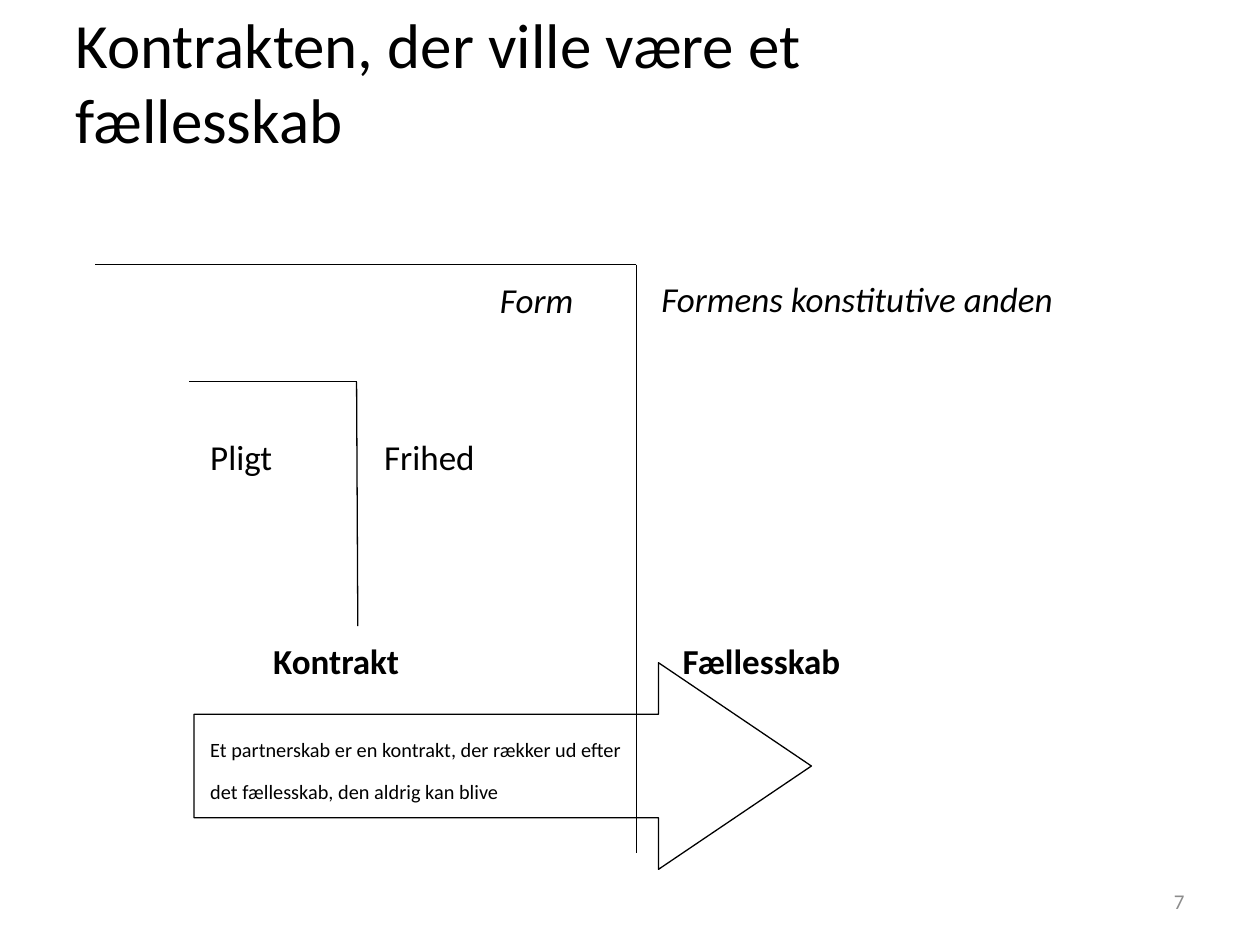
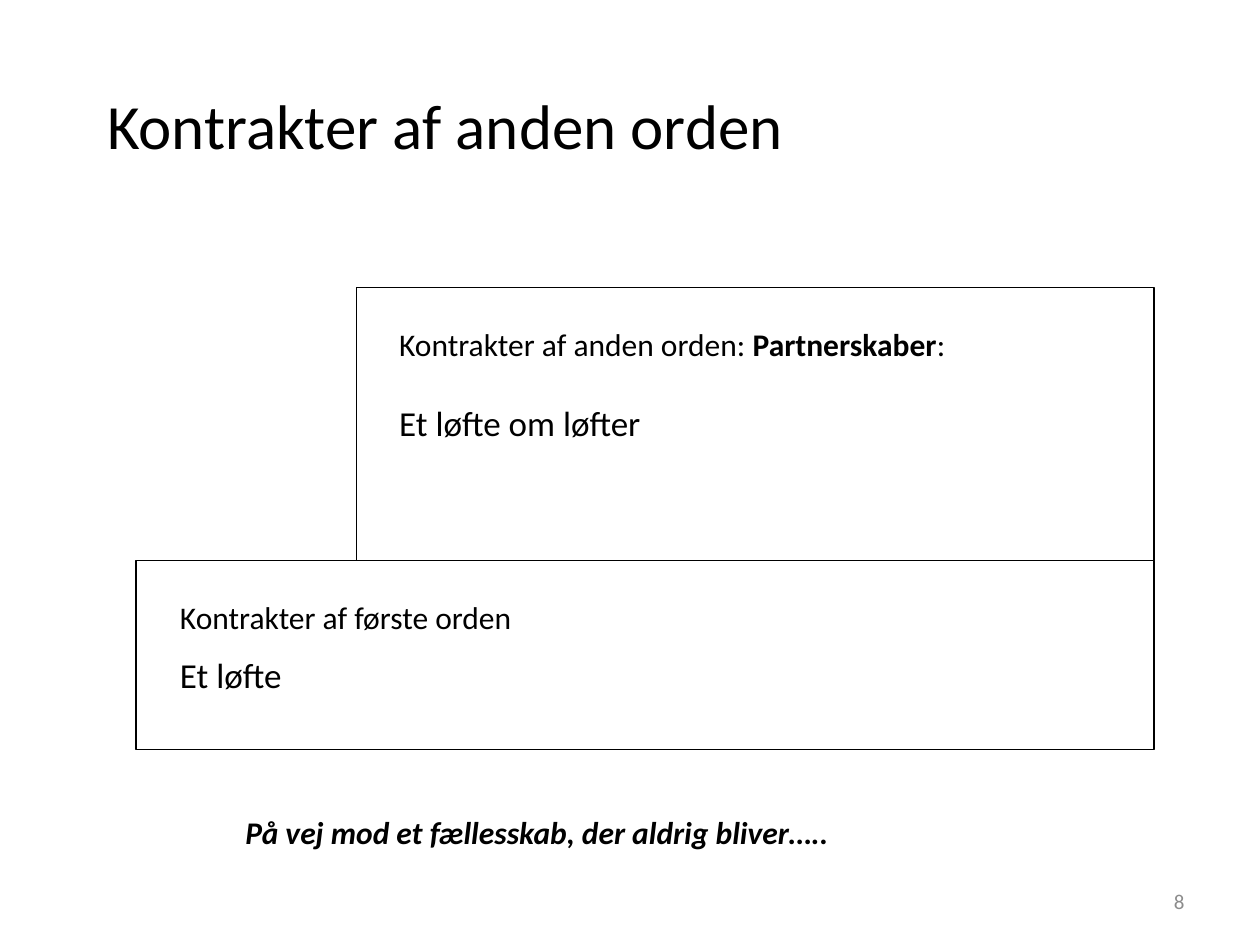
import pptx
import pptx.util
import pptx.dml.color
import pptx.enum.shapes
import pptx.enum.text
import lxml.etree
from pptx.oxml.ns import qn

BLACK = pptx.dml.color.RGBColor(0x00, 0x00, 0x00)
WHITE = pptx.dml.color.RGBColor(0xFF, 0xFF, 0xFF)
GREY = pptx.dml.color.RGBColor(0x8C, 0x8C, 0x8C)
SHAPE = pptx.enum.shapes.MSO_SHAPE
ALIGN = pptx.enum.text.PP_ALIGN
ANCHOR = pptx.enum.text.MSO_ANCHOR
COLS, ROWS = 100, 75
FIRST_NUMBER = 7


class Deck:
    """Holds the style and the current slide; lengths are grid columns and rows."""
    font, line_width = "Calibri", 0.75
    title_size, label_size, small_size, number_size = 36, 20, 18, 12

    def __init__(self):
        self.prs = pptx.Presentation()
        self.prs.slide_width = pptx.util.Inches(10)
        self.prs.slide_height = pptx.util.Inches(7.5)
        self.prs.element.set("firstSlideNum", str(FIRST_NUMBER))

    def x(self, cols):
        return round(self.prs.slide_width * cols / COLS)

    def y(self, rows):
        return round(self.prs.slide_height * rows / ROWS)

    def box(self, left, top, width, height):
        return self.x(left), self.y(top), self.x(width), self.y(height)

    def style(self, p, size, bold=False, italic=False, color=BLACK):
        f = p.font
        f.name, f.size, f.bold, f.italic = self.font, pptx.util.Pt(size), bold, italic
        f.color.rgb = color

    def outline(self, line):
        line.color.rgb = BLACK
        line.width = pptx.util.Pt(self.line_width)

    def slide(self, title, area, bottom_margin=0.5):
        """Starts a slide with its title and slide number."""
        self.s = self.prs.slides.add_slide(self.prs.slide_layouts[5])
        sp = self.s.shapes.title
        sp.left, sp.top, sp.width, sp.height = self.box(*area)
        tf = sp.text_frame
        tf.text = title
        tf.auto_size = pptx.enum.text.MSO_AUTO_SIZE.NONE
        tf.vertical_anchor = ANCHOR.MIDDLE
        tf.margin_bottom = self.y(bottom_margin)
        tf.paragraphs[0].alignment = ALIGN.LEFT
        self.style(tf.paragraphs[0], self.title_size)
        self.number()

    def number(self):
        tf = self.s.shapes.add_textbox(*self.box(71.7, 69.5, 23.3, 4)).text_frame
        tf.vertical_anchor = ANCHOR.MIDDLE
        p = tf.paragraphs[0]
        p.alignment = ALIGN.RIGHT
        self.style(p, self.number_size, color=GREY)
        field = lxml.etree.SubElement(p._p, qn("a:fld"), type="slidenum",
                                      id="{B6F15528-21DE-4FAA-801E-634DDDAF4B2B}")
        lxml.etree.SubElement(field, qn("a:rPr"), lang="da-DK")
        number = FIRST_NUMBER + len(self.prs.slides) - 1
        lxml.etree.SubElement(field, qn("a:t")).text = str(number)

    def shape(self, kind, *area):
        """Adds an outlined shape without fill."""
        sp = self.s.shapes.add_shape(kind, *self.box(*area))
        sp.shadow.inherit = False
        sp.fill.background()
        self.outline(sp.line)
        return sp

    def label(self, text, *area, **look):
        """Adds a white rectangle with text."""
        sp = self.shape(SHAPE.RECTANGLE, *area)
        sp.fill.solid()
        sp.fill.fore_color.rgb = WHITE
        sp.line.fill.background()
        tf = sp.text_frame
        tf.vertical_anchor = ANCHOR.TOP
        p = tf.paragraphs[0]
        p.alignment = ALIGN.LEFT
        self.style(p, self.label_size, **look)
        p.add_run().text = text
        return p

    def text(self, paragraphs, *area, gap=0, wrap=True, **look):
        """Adds a text box; each paragraph is (size, [(words, bold), ...])."""
        tf = self.s.shapes.add_textbox(*self.box(*area)).text_frame
        tf.word_wrap = wrap
        for i, (size, runs) in enumerate(paragraphs):
            p = tf.add_paragraph() if i else tf.paragraphs[0]
            if i:
                p.space_before = pptx.util.Pt(gap)
            self.style(p, size, **look)
            for words, bold in runs:
                r = p.add_run()
                r.text = words
                r.font.bold = bold

    def line(self, x1, y1, x2, y2):
        c = self.s.shapes.add_connector(pptx.enum.shapes.MSO_CONNECTOR.STRAIGHT,
                                        self.x(x1), self.y(y1), self.x(x2), self.y(y2))
        self.outline(c.line)
        lxml.etree.SubElement(c._element.spPr, qn("a:effectLst"))

    def mark(self, left, top, corner, foot, bottom):
        """Adds a distinction mark: a bar with a stem down from its right end."""
        self.line(corner, top, foot, bottom)
        self.line(corner, top, left, top)


def contract_and_community(d):
    d.slide("Kontrakten, der ville være et fællesskab", (5, 3, 76.5, 12.5), bottom_margin=6.2)

    # Statement inside the arrow
    p = d.label("Et partnerskab er en kontrakt, der rækker ud efter "
                "det fællesskab, den aldrig kan blive", 15.7, 57.7, 35.8, 7.8)
    p.runs[0]._r.get_or_add_rPr().set("baseline", "30000")

    # Outer and inner distinction
    d.mark(7.5, 21, 50.5, 50.5, 67.7)
    d.mark(15, 30.3, 28.3, 28.4, 49.7)

    # Labels on each side
    height = 5.3
    for words, left, top, width, look in (
            ("Pligt", 15.7, 34.1, 9.2, {}),
            ("Frihed", 29.5, 34.1, 11.3, {}),
            ("Kontrakt", 20.7, 50.3, 15.4, {"bold": True}),
            ("Fællesskab", 53.2, 50.3, 17, {"bold": True}),
            ("Form", 38.7, 21.6, 11.3, {"italic": True}),
            ("Formens konstitutive anden", 51.5, 21.5, 37.8, {"italic": True})):
        d.label(words, left, top, width, height, **look)

    # Arrow crossing the outer distinction
    arrow = d.shape(SHAPE.RIGHT_ARROW, 15.4, 52.6, 49, 16.4)
    arrow.adjustments[0], arrow.adjustments[1] = 0.5, 0.74


def second_order_contracts(d):
    d.slide("Kontrakter af anden orden", (7.5, 3.6, 85, 12.5))

    # Two stacked frames sharing their right edge
    right, middle = 91.6, 44.5
    for left, top, height in ((10.8, middle, 15), (28.3, middle - 21.7, 21.7)):
        d.shape(SHAPE.RECTANGLE, left, top, right - left, height)

    # Texts in the frames
    d.text([(d.small_size, [("Kontrakter af første orden", False)]),
            (d.label_size, [("Et løfte", False)])], 13.3, 47, 44.2, 10, gap=10)
    d.text([(d.small_size, [("Kontrakter af anden orden: ", False),
                            ("Partnerskaber", True), (":", False)]),
            (d.label_size, [("Et løfte om løfter", False)])],
           30.7, 25.3, 62.7, 12.3, gap=22)

    # Closing line
    d.text([(d.small_size, [("På vej mod et fællesskab, der aldrig bliver…..", True)])],
           18.5, 64, 67.6, 5, wrap=False, italic=True)


def main():
    d = Deck()
    contract_and_community(d)
    second_order_contracts(d)
    d.prs.save("out.pptx")


if __name__ == "__main__":
    main()
